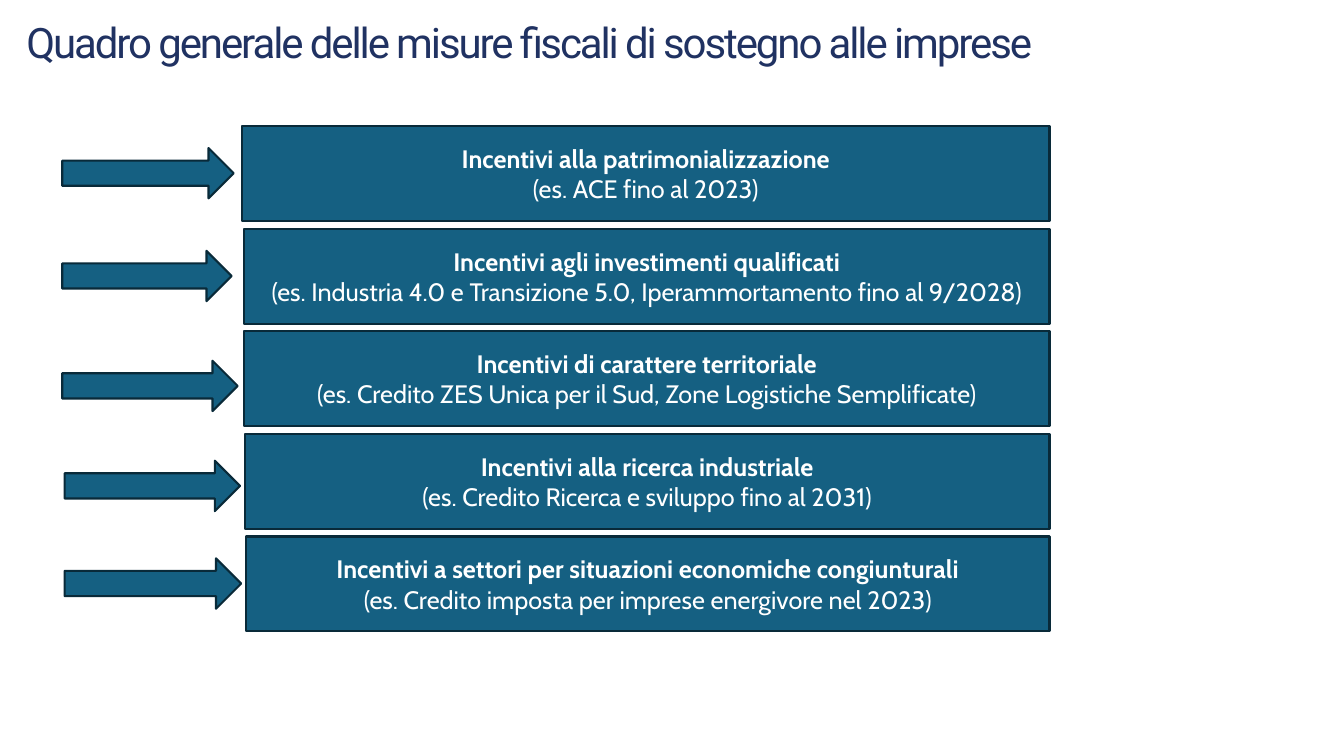
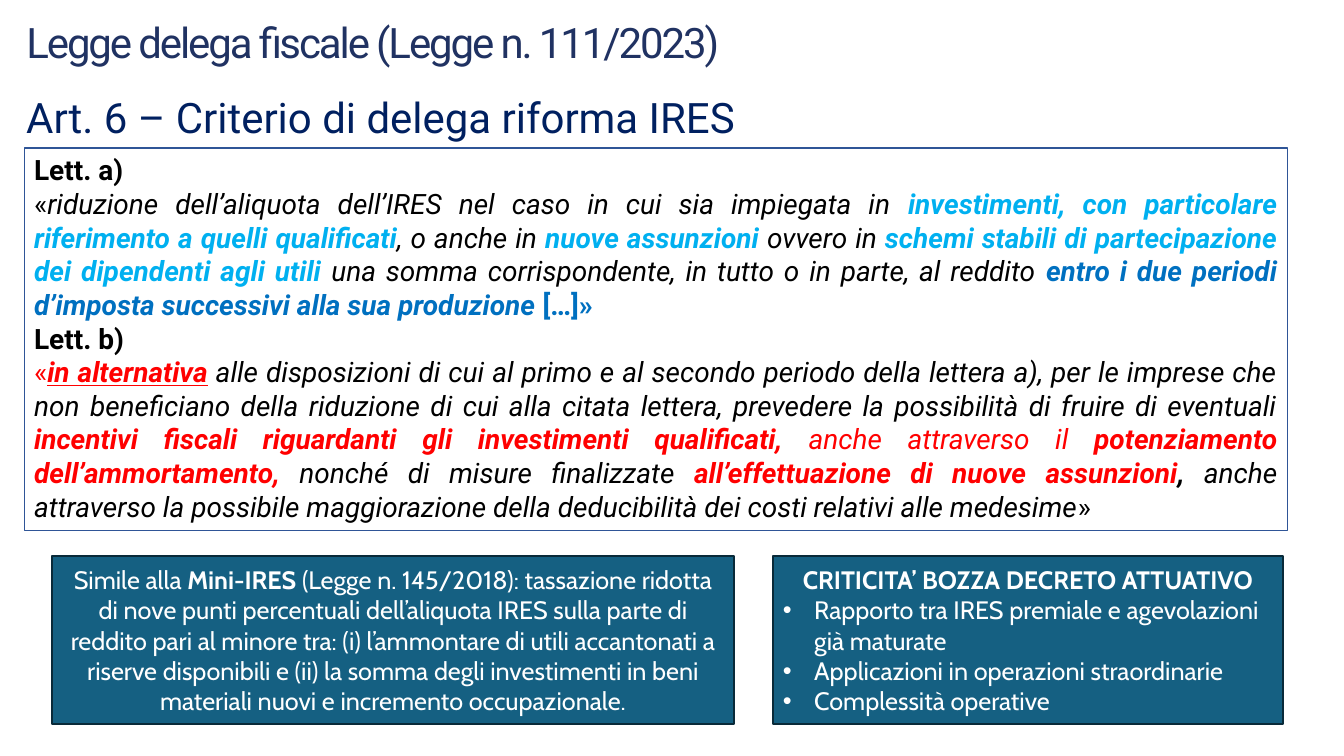
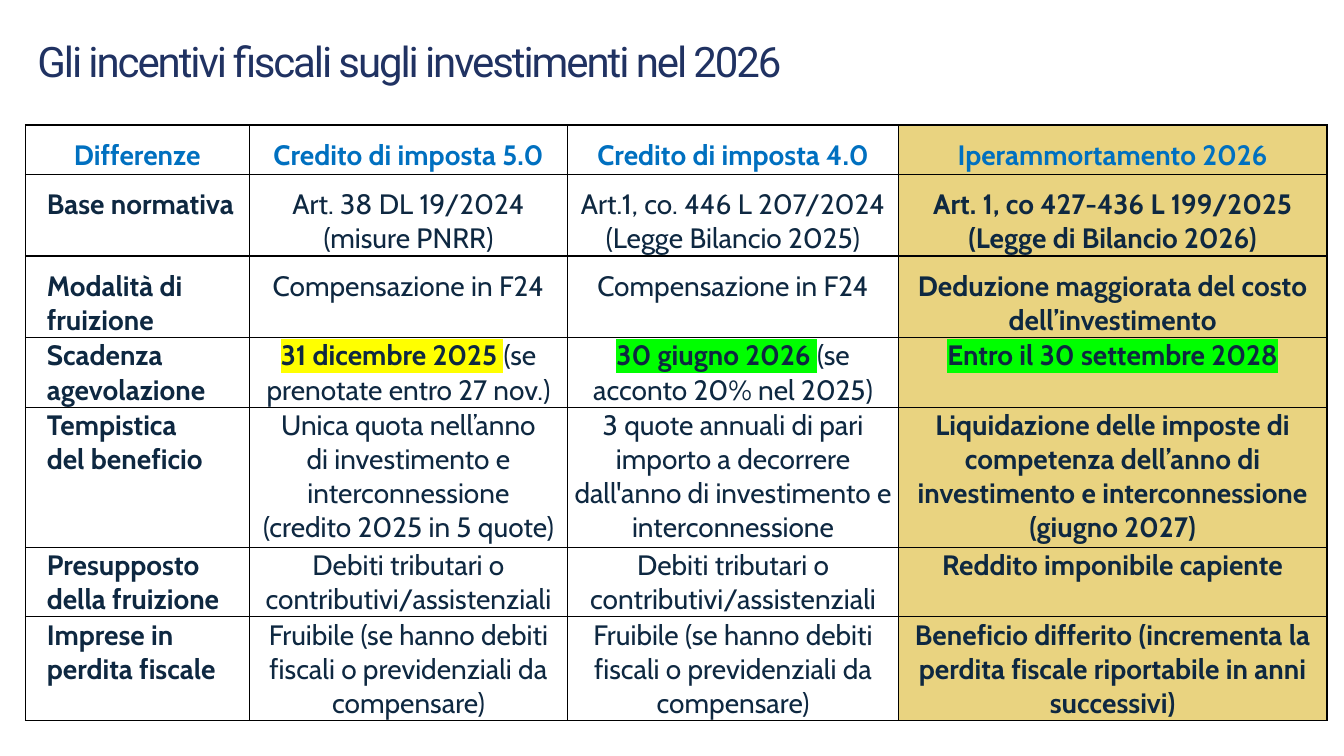
from lxml.etree import SubElement
from pptx import Presentation
from pptx.dml.color import RGBColor
from pptx.enum.shapes import MSO_SHAPE
from pptx.enum.text import MSO_ANCHOR, MSO_AUTO_SIZE, PP_ALIGN
from pptx.oxml.ns import qn
from pptx.util import Cm, Pt

# Shared look
rgb = RGBColor.from_string
TEAL, EDGE, WHITE, BLACK = "156082", "092A39", "FFFFFF", "000000"
NAVY, DEEP, INK, GOLD = "203262", "002060", "0E2841", "E9D380"
SKY, BLUE, RED = "00B0F0", "0070C0", "FF0000"
HEAD, BODY = "Roboto", "Cabin"


def write(frame, lines, face, size, align):
    """Fill a frame; each line is a list of (text, flags, colour) runs."""
    frame.word_wrap = True
    for n, runs in enumerate(lines):
        par = frame.add_paragraph() if n else frame.paragraphs[0]
        par.alignment = align
        for text, flags, hue in runs:
            run = par.add_run()
            run.text = text
            font = run.font
            font.name, font.size = face, Pt(size)
            font.bold, font.italic = "b" in flags, "i" in flags
            if "u" in flags:
                font.underline = True
            font.color.rgb = rgb(hue)


def draw(slide, kind, x, y, w, h, fill=TEAL, edge=EDGE, thick=1.5):
    shape = slide.shapes.add_shape(kind, Cm(x), Cm(y), Cm(w), Cm(h))
    shape.shadow.inherit = False
    if fill:
        shape.fill.solid()
        shape.fill.fore_color.rgb = rgb(fill)
    else:
        shape.fill.background()
    shape.line.color.rgb = rgb(edge)
    shape.line.width = Pt(thick)
    return shape


deck = Presentation()
deck.slide_width, deck.slide_height = Cm(33.87), Cm(19.05)

# Slides and their titles
heads = [
    ("Quadro generale delle misure fiscali di sostegno alle imprese", 0.41, 0.58, 29.34),
    ("Legge delega fiscale (Legge n. 111/2023)", 0.41, 0.58, 19.91),
    ("Gli incentivi fiscali sugli investimenti nel 2026", 0.69, 1.04, 29.08),
]
slides = []
for text, x, y, w in heads:
    slide = deck.slides.add_slide(deck.slide_layouts[5])
    title = slide.shapes.title
    title.left, title.top, title.width, title.height = Cm(x), Cm(y), Cm(w), Cm(1.27)
    frame = title.text_frame
    frame.auto_size = MSO_AUTO_SIZE.NONE
    frame.vertical_anchor = MSO_ANCHOR.TOP
    write(frame, [[(text, "", NAVY)]], HEAD, 30, PP_ALIGN.LEFT)
    par = frame.paragraphs[0]
    par.line_spacing = Pt(28)
    par.runs[0].font._element.set("spc", "-150")
    slides.append(slide)
frameset, law, grid = slides

# Slide 1: one arrow and one box per kind of incentive
# (arrow left, top, width, box left, name, example)
kinds = [
    (1.57, 3.73, 4.32, 6.1, "Incentivi alla patrimonializzazione",
     "(es. ACE fino al 2023)"),
    (1.57, 6.32, 4.27, 6.15, "Incentivi agli investimenti qualificati",
     "(es. Industria 4.0 e Transizione 5.0, Iperammortamento fino al 9/2028)"),
    (1.57, 9.09, 4.42, 6.15, "Incentivi di carattere territoriale",
     "(es. Credito ZES Unica per il Sud, Zone Logistiche Semplificate)"),
    (1.63, 11.61, 4.42, 6.17, "Incentivi alla ricerca industriale",
     "(es. Credito Ricerca e sviluppo fino al 2031)"),
    (1.63, 14.07, 4.45, 6.2, "Incentivi a settori per situazioni economiche congiunturali",
     "(es. Credito imposta per imprese energivore nel 2023)"),
]
for n, (x, y, w, left, name, case) in enumerate(kinds):
    draw(frameset, MSO_SHAPE.RIGHT_ARROW, x, y, w, 1.27)
    box = draw(frameset, MSO_SHAPE.RECTANGLE, left, 3.18 + 2.585 * n, 26.45 - left, 2.39)
    write(box.text_frame, [[(name, "b", WHITE)], [(case, "", WHITE)]],
          BODY, 18, PP_ALIGN.CENTER)

# Slide 2: heading of the article
box = law.shapes.add_textbox(Cm(0.41), Cm(2.18), Cm(31.93), Cm(1.55))
write(box.text_frame, [[("Art. 6 – Criterio di delega riforma IRES", "", DEEP)]],
      HEAD, 30, PP_ALIGN.LEFT)

# Slide 2: text of the law
quote = [
    [("Lett. a)", "b", BLACK)],
    [("«", "", BLACK),
     ("riduzione dell’aliquota dell’IRES nel caso in cui sia impiegata in ", "i", BLACK),
     ("investimenti, con particolare riferimento a quelli qualificati", "bi", SKY),
     (", o anche in ", "i", BLACK),
     ("nuove assunzioni ", "bi", SKY),
     ("ovvero in ", "i", BLACK),
     ("schemi stabili di partecipazione dei dipendenti agli utili ", "bi", SKY),
     ("una somma corrispondente, in tutto o in parte, al reddito ", "i", BLACK),
     ("entro i due periodi d’imposta successivi alla sua produzione ", "bi", BLUE),
     ("[…]»", "b", BLUE)],
    [("Lett. b)", "b", BLACK)],
    [("«", "", RED),
     ("in alternativa", "biu", RED),
     (" ", "bi", RED),
     ("alle disposizioni di cui al primo e al secondo periodo della lettera a), "
      "per le imprese che non beneficiano della riduzione di cui alla citata lettera, "
      "prevedere la possibilità di fruire di eventuali", "i", BLACK),
     (" incentivi fiscali riguardanti gli investimenti qualificati, ", "bi", RED),
     ("anche attraverso il ", "i", RED),
     ("potenziamento dell’ammortamento, ", "bi", RED),
     ("nonché di misure finalizzate ", "i", BLACK),
     ("all’effettuazione di nuove assunzioni", "bi", RED),
     (", ", "bi", BLACK),
     ("anche attraverso la possibile maggiorazione della deducibilità dei costi "
      "relativi alle medesime", "i", BLACK),
     ("»", "", BLACK)],
]
box = draw(law, MSO_SHAPE.RECTANGLE, 0.61, 3.73, 31.83, 9.65, "", "2F5597", 0.75)
box.text_frame.vertical_anchor = MSO_ANCHOR.TOP
write(box.text_frame, quote, HEAD, 20, PP_ALIGN.JUSTIFY)

# Slide 2: remarks below the law
box = draw(law, MSO_SHAPE.RECTANGLE, 1.32, 14.02, 17.17, 4.22)
write(box.text_frame, [[
    ("Simile alla ", "", WHITE),
    ("Mini-IRES", "b", WHITE),
    (" (Legge n. 145/2018): tassazione ridotta di nove punti percentuali dell’aliquota "
     "IRES sulla parte di reddito pari al minore tra: (i) l’ammontare di utili "
     "accantonati a riserve disponibili e (ii) la somma degli investimenti in beni "
     "materiali nuovi e incremento occupazionale.", "", WHITE),
]], BODY, 18, PP_ALIGN.CENTER)

points = ["Rapporto tra IRES premiale e agevolazioni già maturate",
          "Applicazioni in operazioni straordinarie", "Complessità operative"]
box = draw(law, MSO_SHAPE.RECTANGLE, 19.48, 14.02, 12.85, 4.22)
write(box.text_frame,
      [[("CRITICITA’ BOZZA DECRETO ATTUATIVO", "b", WHITE)]]
      + [[(point, "", WHITE)] for point in points], BODY, 18, PP_ALIGN.CENTER)
for par in box.text_frame.paragraphs[1:]:
    par.alignment = PP_ALIGN.LEFT
    props = par._p.get_or_add_pPr()
    props.set("marL", str(Cm(0.79)))
    props.set("indent", str(-Cm(0.79)))
    SubElement(props, qn("a:buFont")).set("typeface", "Arial")
    SubElement(props, qn("a:buChar")).set("char", "•")

# Slide 3: comparison table; a line break starts a new paragraph
wide = [5.64, 8.03, 8.33, 10.8]
tall = [1.24, 2.06, 2.06, 1.75, 3.53, 1.75, 2.62]
rows = [
    ["Differenze", "Credito di imposta 5.0", "Credito di imposta 4.0", "Iperammortamento 2026"],
    ["Base normativa", "Art. 38 DL 19/2024\n(misure PNRR)",
     "Art.1, co. 446 L 207/2024 (Legge Bilancio 2025)",
     "Art. 1, co 427-436 L 199/2025\n(Legge di Bilancio 2026)"],
    ["Modalità di fruizione", "Compensazione in F24", "Compensazione in F24",
     "Deduzione maggiorata del costo dell’investimento"],
    ["Scadenza agevolazione", "(se prenotate entro 27 nov.)", "(se acconto 20% nel 2025)", ""],
    ["Tempistica\ndel beneficio",
     "Unica quota nell’anno\ndi investimento e interconnessione\n(credito 2025 in 5 quote)",
     "3 quote annuali di pari importo a decorrere dall'anno di investimento e interconnessione",
     "Liquidazione delle imposte di competenza dell’anno di investimento e "
     "interconnessione (giugno 2027)"],
    ["Presupposto della fruizione", "Debiti tributari o contributivi/assistenziali",
     "Debiti tributari o contributivi/assistenziali", "Reddito imponibile capiente"],
    ["Imprese in perdita fiscale",
     "Fruibile (se hanno debiti fiscali o previdenziali da compensare)",
     "Fruibile (se hanno debiti fiscali o previdenziali da compensare)",
     "Beneficio differito (incrementa la perdita fiscale riportabile in anni successivi)"],
]
# Highlighted dates that open a cell
dates = {(3, 1): ("31 dicembre 2025 ", "FFFF00"),
         (3, 2): ("30 giugno 2026 ", "00FF00"),
         (3, 3): ("Entro il 30 settembre 2028", "00FF00")}

table = grid.shapes.add_table(len(rows), len(wide), Cm(0.64), Cm(3.15),
                              Cm(sum(wide)), Cm(sum(tall))).table
table.first_row = table.horz_banding = False
for col, w in zip(table.columns, wide):
    col.width = Cm(w)
for r, row in enumerate(rows):
    table.rows[r].height = Cm(tall[r])
    for c, text in enumerate(row):
        cell = table.cell(r, c)
        cell.margin_left = cell.margin_right = Cm(0.03)
        cell.margin_top = Cm(0.33 if r < 3 else 0.03)
        cell.margin_bottom = 0
        cell.vertical_anchor = MSO_ANCHOR.TOP

        # Borders, then fill
        props = cell._tc.get_or_add_tcPr()
        for side in ("a:lnL", "a:lnR", "a:lnT", "a:lnB"):
            line = SubElement(props, qn(side), w=str(Pt(1)))
            SubElement(SubElement(line, qn("a:solidFill")), qn("a:srgbClr"), val=BLACK)
        cell.fill.solid()
        cell.fill.fore_color.rgb = rgb(GOLD if c == 3 else WHITE)

        # Text
        hue = INK if r else BLUE
        flags = "b" if r == 0 or c in (0, 3) else ""
        lines = [[(part, flags, hue)] for part in text.split("\n") if part]
        label = r > 0 and c == 0
        if (r, c) in dates:
            date, mark = dates[r, c]
            lines = [[(date, "b", hue)] + sum(lines, [])]
        write(cell.text_frame, lines, BODY, 20, PP_ALIGN.LEFT if label else PP_ALIGN.CENTER)
        if label:
            for par in cell.text_frame.paragraphs:
                par._p.get_or_add_pPr().set("marL", str(Cm(0.51)))
        if (r, c) in dates:
            look = cell.text_frame.paragraphs[0].runs[0].font._element
            glow = SubElement(look, qn("a:highlight"))
            SubElement(glow, qn("a:srgbClr"), val=mark)
            look.find(qn("a:solidFill")).addnext(glow)

deck.save("out.pptx")
